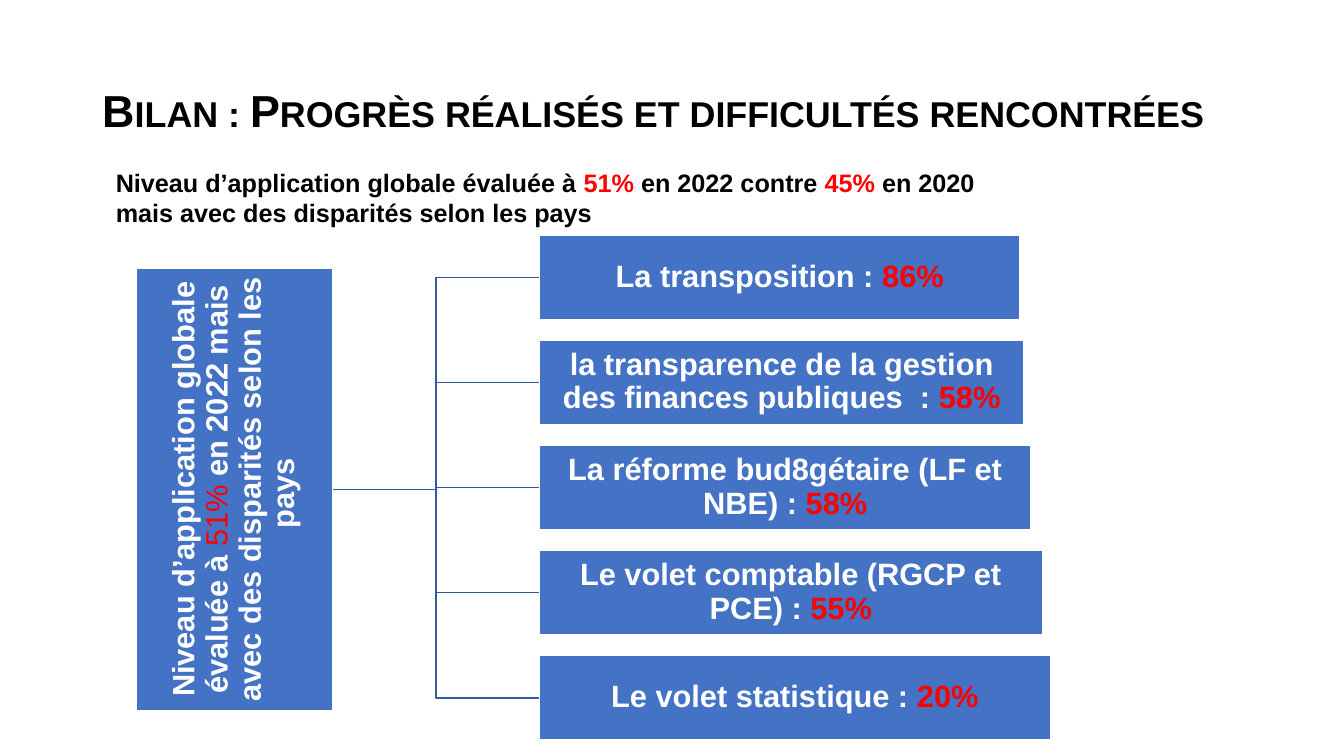
import dataclasses
import pptx
import pptx.dml.color
import pptx.enum.shapes
import pptx.enum.text
import pptx.util

COLS, ROWS = 80, 45


@dataclasses.dataclass(frozen=True)
class Theme:
    font: str = "Arial"
    ink: str = "000000"
    white: str = "FFFFFF"
    red: str = "FF0000"
    blue: str = "4472C4"
    link: str = "365B9D"
    title: int = 32
    lead: int = 18
    box: int = 22


THEME = Theme()

# Texts alternate between plain and red parts
TITLE = ["Bilan : Progrès réalisés et difficultés rencontrées"]
LEAD = ["Niveau d’application globale évaluée à ", "51% ", "en 2022 contre ",
        "45%", " en 2020 mais avec des disparités selon les pays"]
ROOT = ["Niveau d’application globale évaluée à ", "51%",
        " en 2022 mais avec des disparités selon les pays "]
ITEMS = [
    ("La transposition : ", "86%", 28.62),
    ("la transparence de la gestion des finances publiques  : ", "58%", 28.86),
    ("La réforme bud8gétaire (LF et NBE) : ", "58%", 29.28),
    ("Le volet comptable (RGCP et PCE) : ", "55%", 29.94),
    ("Le volet statistique : ", "20%", 30.42),
]

# Tree layout in columns and rows
ROOT_X, ROOT_Y = 13.95, 29.13
ROOT_LONG, ROOT_WIDE = 26.34, 11.7
ITEM_X, ITEM_Y, ITEM_H, STEP = 32.1, 13.98, 5.04, 6.26


def color(code):
    return pptx.dml.color.RGBColor.from_string(code)


def grid(deck, col, row):
    """Turn columns and rows into slide lengths."""
    return round(deck.slide_width * col / COLS), round(deck.slide_height * row / ROWS)


def write(frame, parts, size, ink, red_bold=True):
    """Fill a frame with plain and red parts in turn."""
    frame.word_wrap = True
    para = frame.paragraphs[0]
    para.text = parts[0]
    for part in parts[1:]:
        para.add_run().text = part
    for i, run in enumerate(para.runs):
        red = i % 2 == 1
        run.font.name = THEME.font
        run.font.size = pptx.util.Pt(size)
        run.font.bold = red_bold if red else True
        run.font.color.rgb = color(THEME.red if red else ink)
    return para


def add_text(deck, slide, place, parts, size):
    left, top = grid(deck, *place[:2])
    width, height = grid(deck, *place[2:])
    frame = slide.shapes.add_textbox(left, top, width, height).text_frame
    return frame, write(frame, parts, size, THEME.ink)


def add_box(deck, slide, place, parts, turn=0, red_bold=True):
    left, top = grid(deck, *place[:2])
    width, height = grid(deck, *place[2:])
    box = slide.shapes.add_shape(
        pptx.enum.shapes.MSO_SHAPE.RECTANGLE, left, top, width, height)
    box.rotation = turn
    box.shadow.inherit = False
    box.fill.solid()
    box.fill.fore_color.rgb = color(THEME.blue)
    box.line.color.rgb = color(THEME.white)
    box.line.width = pptx.util.Pt(1)
    frame = box.text_frame
    frame.margin_left = frame.margin_right = pptx.util.Inches(0.02)
    frame.margin_top = frame.margin_bottom = pptx.util.Inches(0.02)
    frame.vertical_anchor = pptx.enum.text.MSO_ANCHOR.MIDDLE
    para = write(frame, parts, THEME.box, THEME.white, red_bold)
    para.alignment = pptx.enum.text.PP_ALIGN.CENTER
    para.line_spacing = 0.9


def add_link(deck, slide, row):
    """Draw an elbow line from the root box to an item."""
    start = ROOT_X + ROOT_WIDE / 2
    mid = (start + ITEM_X) / 2
    path = [grid(deck, *spot) for spot in
            ((start, ROOT_Y), (mid, ROOT_Y), (mid, row), (ITEM_X, row))]
    pen = slide.shapes.build_freeform(*path[0])
    pen.add_line_segments(path[1:], close=False)
    link = pen.convert_to_shape()
    link.shadow.inherit = False
    link.fill.background()
    link.line.color.rgb = color(THEME.link)
    link.line.width = pptx.util.Pt(1)


def main():
    deck = pptx.Presentation()
    deck.slide_width = pptx.util.Inches(13.33)
    deck.slide_height = pptx.util.Inches(7.5)
    slide = deck.slides.add_slide(deck.slide_layouts[6])

    # Title in small capitals
    frame, para = add_text(deck, slide, (5.5, 2.4, 69, 8.7), TITLE, THEME.title)
    frame.vertical_anchor = pptx.enum.text.MSO_ANCHOR.MIDDLE
    para.line_spacing = 0.9
    para.runs[0].font._element.set("cap", "small")

    # Links lie behind the boxes
    tops = [ITEM_Y + i * STEP for i in range(len(ITEMS))]
    for top in tops:
        add_link(deck, slide, top + ITEM_H / 2)

    # Root box, turned to read upwards
    place = (ROOT_X - ROOT_LONG / 2, ROOT_Y - ROOT_WIDE / 2, ROOT_LONG, ROOT_WIDE)
    add_box(deck, slide, place, ROOT, turn=270, red_bold=False)

    # Item boxes
    for top, (label, rate, width) in zip(tops, ITEMS):
        add_box(deck, slide, (ITEM_X, top, width, ITEM_H), [label, rate])

    # Lead sentence
    add_text(deck, slide, (6.3, 9.66, 56, 6.06), LEAD, THEME.lead)

    deck.save("out.pptx")


if __name__ == "__main__":
    main()
